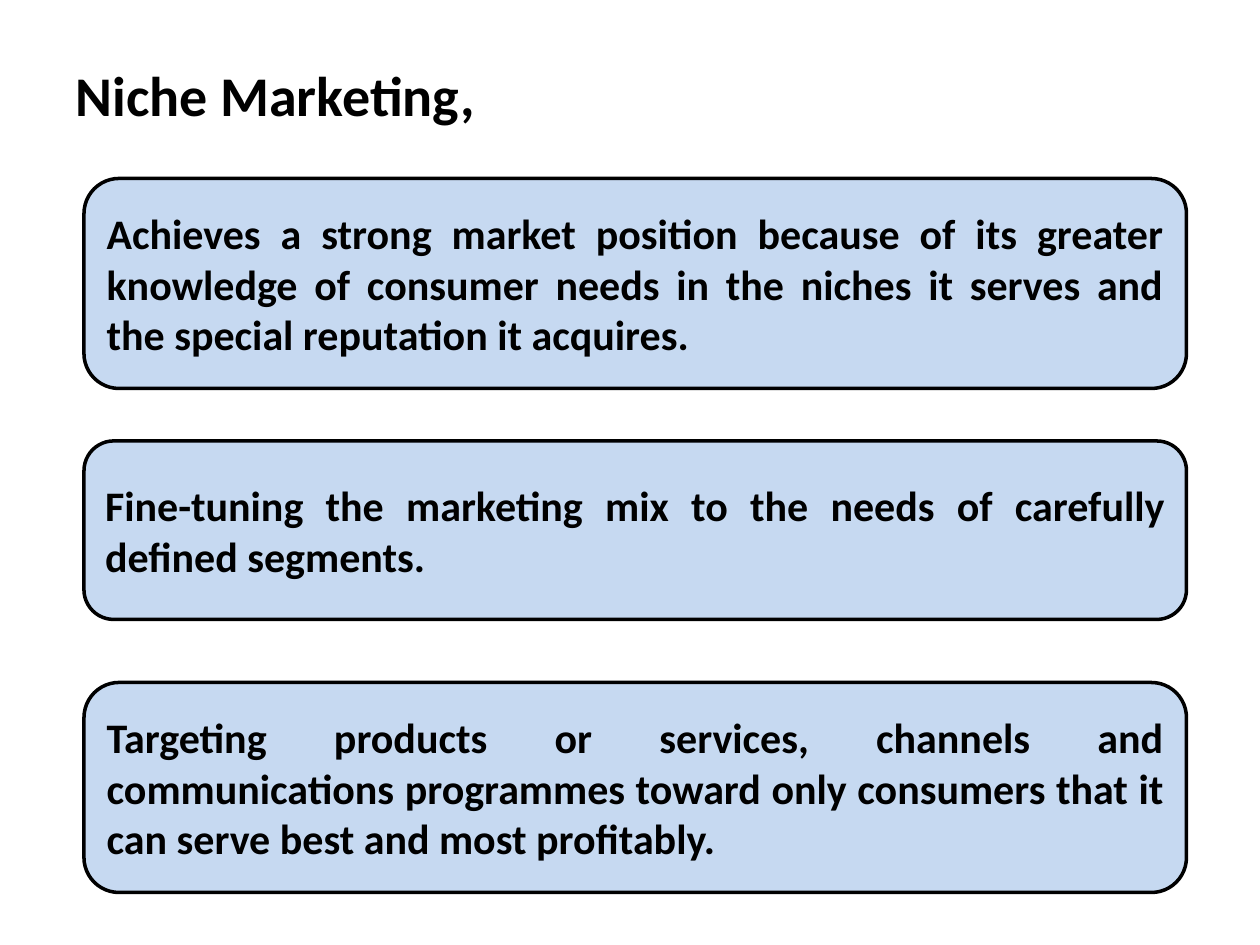
"""Build the Niche Marketing slide with three statement panels."""
from pptx import Presentation
from pptx.dml.color import RGBColor
from pptx.enum.shapes import MSO_SHAPE
from pptx.enum.text import MSO_ANCHOR, PP_ALIGN
from pptx.util import Pt

ROUNDED = MSO_SHAPE.ROUNDED_RECTANGLE
MIDDLE = MSO_ANCHOR.MIDDLE
LEFT = PP_ALIGN.LEFT
JUSTIFY = PP_ALIGN.JUSTIFY
TITLE_ONLY = 5

FONT = "Calibri"
COLOURS = {"ink": "000000", "panel": "C6D9F1"}
PANEL_LEFT, PANEL_WIDTH = 48, 630
PANELS = [
    (102, 120, "Achieves a strong market position because of its greater knowledge "
               "of consumer needs in the niches it serves and the special reputation "
               "it acquires."),
    (252, 102, "Fine-tuning the marketing mix to the needs of carefully defined "
               "segments."),
    (390, 120, "Targeting products or services, channels and communications "
               "programmes toward only consumers that it can serve best and most "
               "profitably."),
]


def colour(name):
    return RGBColor.from_string(COLOURS[name])


def write(box, text, size, alignment):
    frame = box.text_frame
    frame.word_wrap = True
    frame.vertical_anchor = MIDDLE
    para = frame.paragraphs[0]
    para.alignment = alignment
    span = para.add_run()
    span.text = text
    span.font.name = FONT
    span.font.size = Pt(size)
    span.font.bold = True
    span.font.color.rgb = colour("ink")


def add_title(page, text):
    title = page.shapes.title
    title.left, title.top = Pt(36), Pt(24)
    title.width, title.height = Pt(648), Pt(60)
    write(title, text, 32, LEFT)


def add_panel(page, top, height, text):
    panel = page.shapes.add_shape(
        ROUNDED, Pt(PANEL_LEFT), Pt(top), Pt(PANEL_WIDTH), Pt(height))
    panel.shadow.inherit = False
    panel.fill.solid()
    panel.fill.fore_color.rgb = colour("panel")
    panel.line.color.rgb = colour("ink")
    panel.line.width = Pt(2)
    write(panel, text, 24, JUSTIFY)


def main():
    deck = Presentation()
    deck.slide_width, deck.slide_height = Pt(720), Pt(540)
    page = deck.slides.add_slide(deck.slide_layouts[TITLE_ONLY])
    add_title(page, "Niche Marketing,")
    for top, height, text in PANELS:
        add_panel(page, top, height, text)
    deck.save("out.pptx")


if __name__ == "__main__":
    main()
